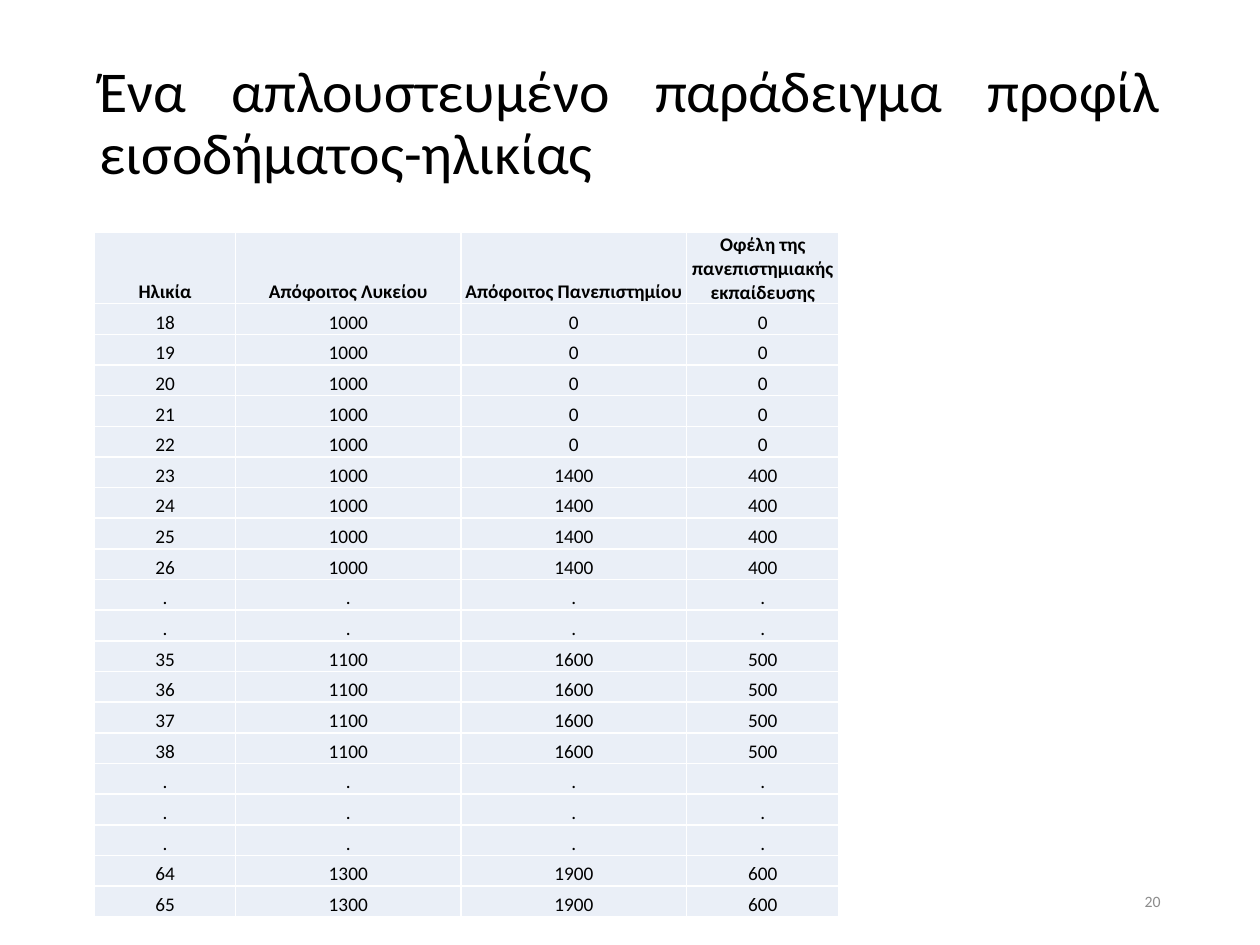
import dataclasses

import pptx
import pptx.dml.color
import pptx.enum.text
import pptx.oxml
import pptx.oxml.ns
import pptx.util

Inches = pptx.util.Inches
Align = pptx.enum.text.PP_ALIGN
Anchor = pptx.enum.text.MSO_ANCHOR


@dataclasses.dataclass
class Theme:
    font: str = "Calibri"
    ink: str = "000000"
    muted: str = "8C8C8C"
    cell: str = "EAEFF7"
    border: str = "FFFFFF"
    border_pt: float = 1
    title_pt: float = 33
    table_pt: float = 11
    number_pt: float = 9


def rgb(value):
    return pptx.dml.color.RGBColor.from_string(value)


def write(tf, text, *, font, size, color, bold=False, align=Align.LEFT, spacing=None):
    """Put one formatted paragraph in a text frame."""
    p = tf.paragraphs[0]
    p.alignment = align
    if spacing:
        p.line_spacing = spacing
    r = p.add_run()
    r.text = text
    r.font.name = font
    r.font.size = pptx.util.Pt(size)
    r.font.bold = bold
    r.font.color.rgb = rgb(color)


class SlideBuilder:
    def __init__(self, prs, theme):
        self.theme = theme
        self.s = prs.slides.add_slide(prs.slide_layouts[6])

    def text(self, text, left, top, width, height, **fmt):
        sp = self.s.shapes.add_textbox(
            Inches(left), Inches(top), Inches(width), Inches(height))
        tf = sp.text_frame
        tf.word_wrap = True
        tf.vertical_anchor = Anchor.MIDDLE
        write(tf, text, font=self.theme.font, **fmt)

    def table(self, rows, left, top, col_widths, height, header_height):
        frame = self.s.shapes.add_table(
            len(rows), len(col_widths), Inches(left), Inches(top),
            Inches(sum(col_widths)), Inches(height))
        table = frame.table
        table.first_row = table.horz_banding = False
        for column, width in zip(table.columns, col_widths):
            column.width = Inches(width)
        body_height = (height - header_height) / (len(rows) - 1)
        for i, values in enumerate(rows):
            table.rows[i].height = Inches(body_height if i else header_height)
            for j, value in enumerate(values):
                self.cell(table.cell(i, j), str(value), bold=i == 0)

    def cell(self, cell, text, bold):
        t = self.theme
        cell.fill.solid()
        cell.fill.fore_color.rgb = rgb(t.cell)
        cell.vertical_anchor = Anchor.BOTTOM
        cell.margin_left = cell.margin_right = cell.margin_top = Inches(0.01)
        cell.margin_bottom = 0
        write(cell.text_frame, text, font=t.font, size=t.table_pt,
              color=t.ink, bold=bold, align=Align.CENTER)
        # Borders come before the fill in the cell properties
        tc_pr = cell._tc.get_or_add_tcPr()
        for i, side in enumerate(("lnL", "lnR", "lnT", "lnB")):
            tc_pr.insert(i, pptx.oxml.parse_xml(
                f'<a:{side} {pptx.oxml.ns.nsdecls("a")} w="{pptx.util.Pt(t.border_pt)}">'
                f'<a:solidFill><a:srgbClr val="{t.border}"/></a:solidFill></a:{side}>'))


def income_rows(ages, school, university):
    """Income by age, with the gain from university in the last column."""
    gain = max(university - school, 0)
    return [(age, school, university, gain) for age in ages]


def main():
    theme = Theme()
    prs = pptx.Presentation()
    prs.slide_width, prs.slide_height = Inches(10), Inches(7.5)
    slide = SlideBuilder(prs, theme)

    # Title
    slide.text("Ένα απλουστευμένο παράδειγμα προφίλ εισοδήματος-ηλικίας",
               0.69, 0.4, 8.62, 1.18, size=theme.title_pt, color=theme.ink,
               align=Align.JUSTIFY, spacing=0.9)

    # Income by age
    header = ("Ηλικία", "Απόφοιτος Λυκείου", "Απόφοιτος Πανεπιστημίου",
              "Οφέλη της πανεπιστημιακής εκπαίδευσης")
    gap = (".",) * len(header)
    rows = [
        header,
        *income_rows(range(18, 23), 1000, 0),
        *income_rows(range(23, 27), 1000, 1400),
        *[gap] * 2,
        *income_rows(range(35, 39), 1100, 1600),
        *[gap] * 3,
        *income_rows(range(64, 66), 1300, 1900),
    ]
    slide.table(rows, 0.75, 1.84, (1.12, 1.79, 1.79, 1.21),
                height=5.44, header_height=0.57)

    # Slide number
    slide.text("20", 7.06, 6.95, 2.25, 0.4, size=theme.number_pt,
               color=theme.muted, align=Align.RIGHT)

    prs.save("out.pptx")


if __name__ == "__main__":
    main()
